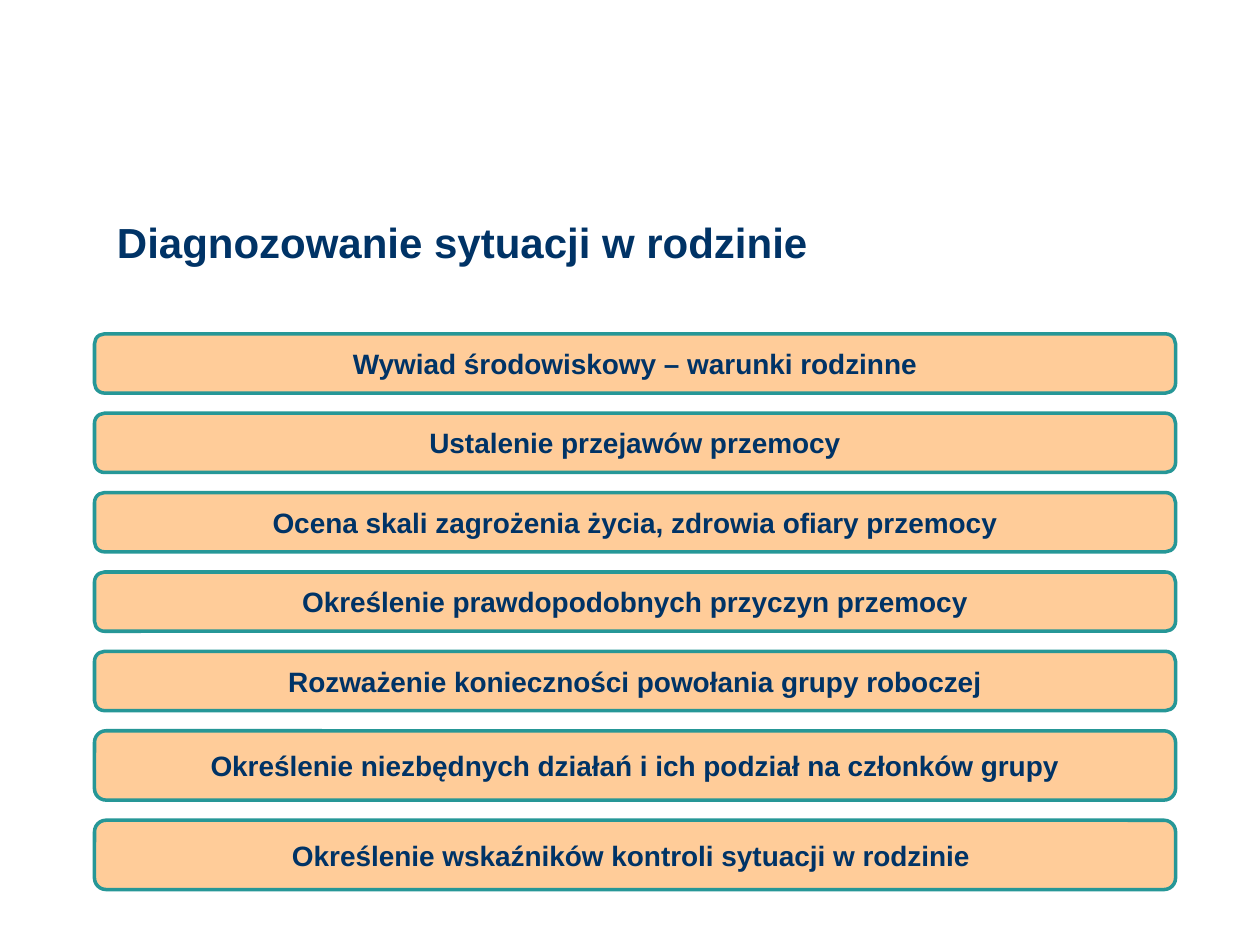
"""Build a slide listing the steps of diagnosing a family's situation."""
from dataclasses import dataclass

from pptx import Presentation
from pptx.dml.color import RGBColor
from pptx.enum.shapes import MSO_SHAPE
from pptx.enum.text import MSO_ANCHOR, PP_ALIGN
from pptx.util import Inches, Pt


@dataclass(frozen=True)
class Theme:
    """Hold the colours and type sizes."""
    ink: RGBColor = RGBColor(0x00, 0x33, 0x66)
    fill: RGBColor = RGBColor(0xFF, 0xCC, 0x99)
    edge: RGBColor = RGBColor(0x26, 0x97, 0x97)
    face: str = "Arial"
    head: Pt = Pt(24)
    step: Pt = Pt(16)
    line: Pt = Pt(2)


THEME = Theme()
LEFT, TOP, WIDTH, GAP = 0.75, 2.65, 8.58, 0.16
STEPS = [
    ("Wywiad środowiskowy – warunki rodzinne", 0.47),
    ("Ustalenie przejawów przemocy", 0.47),
    ("Ocena skali zagrożenia życia, zdrowia ofiary przemocy", 0.47),
    ("Określenie prawdopodobnych przyczyn przemocy", 0.47),
    ("Rozważenie konieczności powołania grupy roboczej", 0.47),
    ("Określenie niezbędnych działań i ich podział na członków grupy", 0.55),
    ("Określenie wskaźników kontroli sytuacji w rodzinie ", 0.55),
]


def apply(item, form):
    """Set each format value on the item."""
    for name, value in form.items():
        setattr(item, name, value)


def write(shape, text, size, anchor, form):
    """Put one bold paragraph into the shape."""
    frame = shape.text_frame
    apply(frame, {"word_wrap": True, "vertical_anchor": anchor})
    para = frame.paragraphs[0]
    apply(para, form)
    run = para.add_run()
    run.text = text
    apply(run.font, {"name": THEME.face, "size": size, "bold": True})
    run.font.color.rgb = THEME.ink


def add_title(slide, text):
    """Add the slide title."""
    box = slide.shapes.add_textbox(
        Inches(0.83), Inches(0.83), Inches(8.67), Inches(1.34))
    write(box, text, THEME.head, MSO_ANCHOR.BOTTOM,
          {"alignment": PP_ALIGN.LEFT, "line_spacing": 0.9})


def add_step(slide, text, top, height):
    """Add one rounded bar with its step."""
    bar = slide.shapes.add_shape(
        MSO_SHAPE.ROUNDED_RECTANGLE,
        Inches(LEFT), Inches(top), Inches(WIDTH), Inches(height))
    bar.shadow.inherit = False
    bar.fill.solid()
    bar.fill.fore_color.rgb = THEME.fill
    bar.line.color.rgb = THEME.edge
    bar.line.width = THEME.line
    write(bar, text, THEME.step, MSO_ANCHOR.MIDDLE,
          {"alignment": PP_ALIGN.CENTER})


def main():
    """Build and save the slide."""
    deck = Presentation()
    apply(deck, {"slide_width": Inches(10), "slide_height": Inches(7.5)})
    slide = deck.slides.add_slide(deck.slide_layouts[6])
    add_title(slide, "Diagnozowanie sytuacji w rodzinie")
    top = TOP
    for text, height in STEPS:
        add_step(slide, text, top, height)
        top += height + GAP
    deck.save("out.pptx")


if __name__ == "__main__":
    main()
